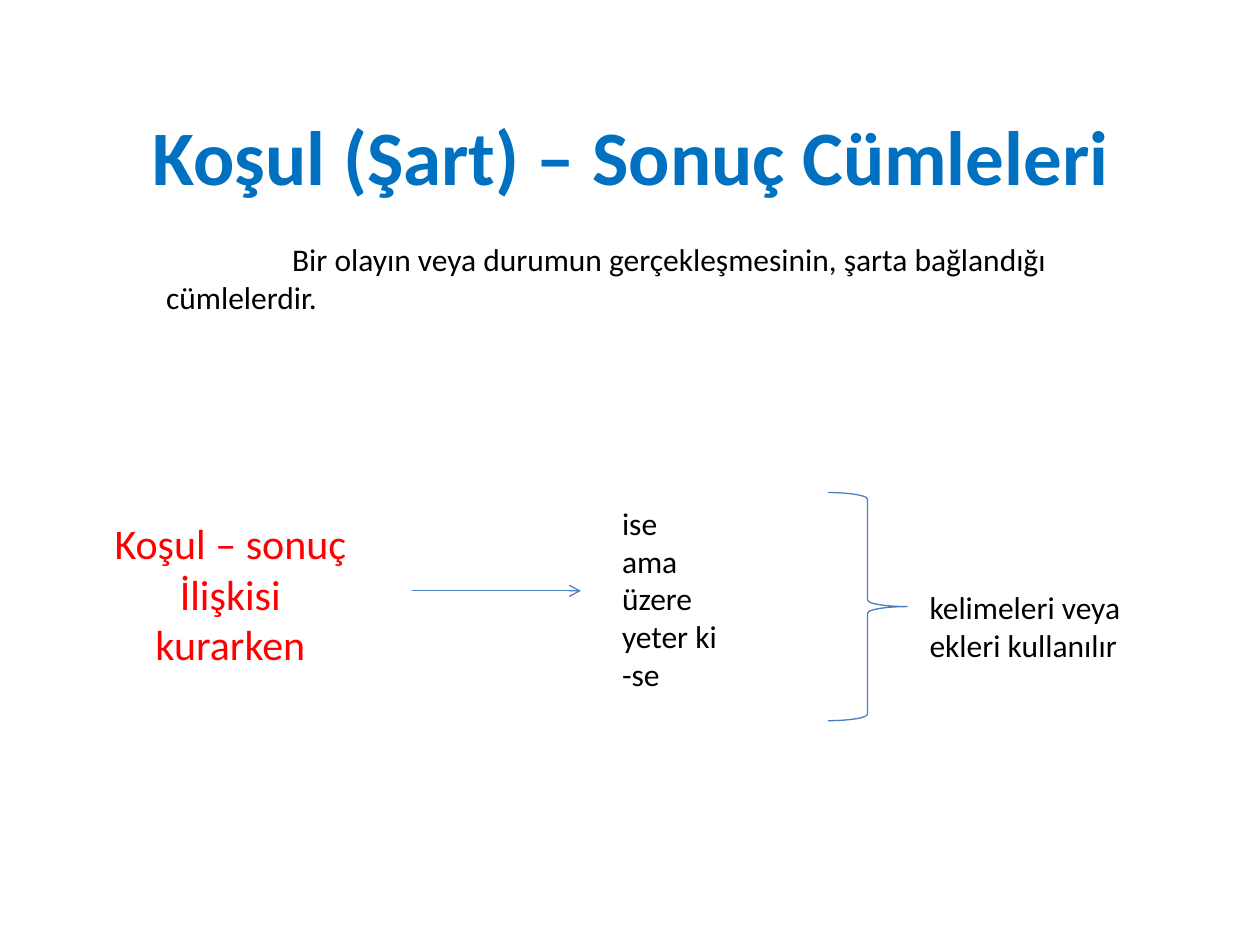
from pptx import Presentation
from pptx.dml.color import RGBColor
from pptx.enum.shapes import MSO_CONNECTOR as Conn, MSO_SHAPE as Kind
from pptx.enum.text import MSO_ANCHOR as Anchor, PP_ALIGN as Align
from pptx.oxml.ns import qn
from pptx.util import Cm, Pt
from lxml import etree

BLUE = RGBColor(0x00, 0x70, 0xC0)
RED = RGBColor(0xFF, 0x00, 0x00)
BLACK = RGBColor(0x00, 0x00, 0x00)
STEEL = RGBColor(0x4B, 0x7E, 0xBC)


def fill(frame, lines, size, color, align=Align.LEFT, bold=False):
    looks = {"name": "Calibri", "size": Pt(size), "bold": bold}
    frame.text = "\n".join(lines)
    for para in frame.paragraphs:
        para.alignment = align
        font = para.runs[0].font
        for key, value in looks.items():
            setattr(font, key, value)
        font.color.rgb = color


deck = Presentation()
deck.slide_width, deck.slide_height = Cm(25.4), Cm(19.05)
slide = deck.slides.add_slide(deck.slide_layouts[5])
shapes = slide.shapes

title = shapes.title
place = {"left": Cm(1.3), "top": Cm(1.52), "width": Cm(22.86), "height": Cm(3.18)}
for key, value in place.items():
    setattr(title, key, value)
fill(title.text_frame, ["Koşul (Şart) – Sonuç Cümleleri"], 44, BLUE, Align.CENTER, True)
title.text_frame.vertical_anchor = Anchor.MIDDLE

notes = [
    ((3.1, 4.72, 19, 1.8), True, 18, BLACK, Align.LEFT, 2.54,
     ["Bir olayın veya durumun gerçekleşmesinin, şarta bağlandığı cümlelerdir."]),
    ((2.03, 10.31, 5.23, 3.33), False, 24, RED, Align.CENTER, 0,
     ["Koşul – sonuç", "İlişkisi", "kurarken"]),
    ((12.29, 10.03, 2.44, 4.11), False, 18, BLACK, Align.LEFT, 0,
     ["ise", "ama", "üzere", "yeter ki", "-se"]),
    ((18.49, 11.73, 4.55, 1.8), False, 18, BLACK, Align.LEFT, 0,
     ["kelimeleri veya", "ekleri kullanılır"]),
]
for box, wrap, size, color, align, indent, lines in notes:
    frame = shapes.add_textbox(*map(Cm, box)).text_frame
    frame.word_wrap = wrap
    fill(frame, lines, size, color, align)
    if indent:
        props = frame.paragraphs[0]._p.get_or_add_pPr()
        props.set("indent", str(Cm(indent)))

arrow = shapes.add_connector(Conn.STRAIGHT, Cm(8.31), Cm(11.91), Cm(11.71), Cm(11.91))
brace = shapes.add_shape(Kind.RIGHT_BRACE, Cm(16.69), Cm(9.93), Cm(1.6), Cm(4.6))
brace.shadow.inherit = False
brace.fill.background()
for shape in (arrow, brace):
    shape.line.color.rgb = STEEL
    shape.line.width = Pt(0.75)
tail = etree.SubElement(arrow.line._get_or_add_ln(), qn("a:tailEnd"))
tail.set("type", "arrow")
etree.SubElement(arrow._element.spPr, qn("a:effectLst"))

deck.save("out.pptx")
